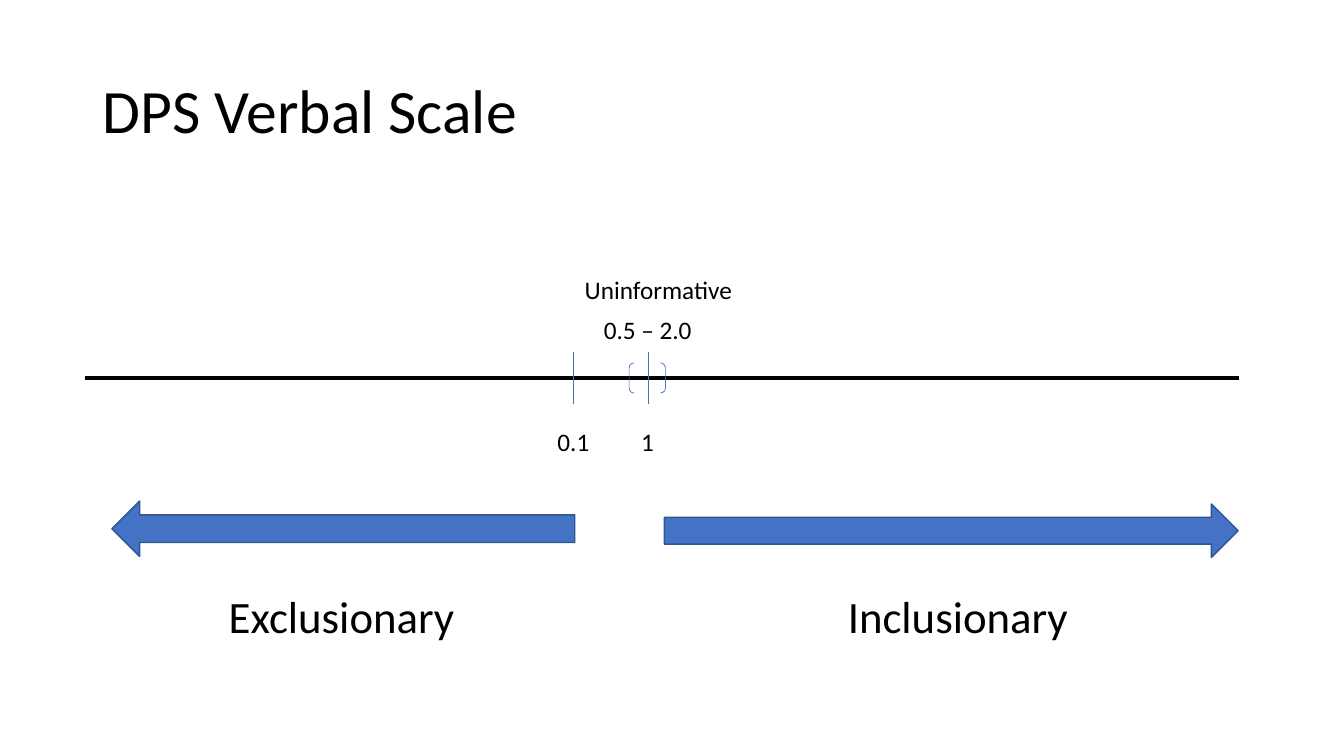
from lxml import etree
from pptx import Presentation
from pptx import util as u
from pptx.dml.color import RGBColor
from pptx.enum import shapes, text
from pptx.oxml.ns import qn

# Content: lengths in inches
TITLE = "DPS Verbal Scale"
AXIS = (0.84, 12.29, 3.75)  # left, right, height on slide
TICKS = [5.69, 6.43]
RANGE = (6.24, 3.6, 0.36, 0.3)
LABELS = [  # words, size name, left, top, width, height
    ("1", "small", 6.26, 4.18, 0.33, 0.4),
    ("0.5 – 2.0", "small", 5.89, 3.07, 1.08, 0.4),
    ("Uninformative", "small", 5.7, 2.67, 1.68, 0.4),
    ("0.1", "small", 5.43, 4.18, 0.52, 0.4),
    ("Exclusionary", "large", 2.17, 5.79, 2.46, 0.64),
    ("Inclusionary", "large", 8.31, 5.79, 2.41, 0.64),
]
ARROWS = [  # box, turn in degrees
    ((1.11, 4.97, 4.59, 0.55), 0),
    ((6.59, 5, 5.69, 0.53), 180),
]


class Theme:
    font = "Calibri"
    ink = RGBColor.from_string("000000")
    blue = RGBColor.from_string("4472C4")
    edge = RGBColor.from_string("325491")
    size = {"title": 44, "large": 32, "small": 18}
    thick, mid, thin = 3, 1, 0.5


def inches(*vals):
    return [u.Inches(v) for v in vals]


def write(frame, words, size):
    para = frame.paragraphs[0]
    run = para.add_run()
    run.text = words
    run.font.name = Theme.font
    run.font.size = u.Pt(Theme.size[size])
    run.font.color.rgb = Theme.ink
    return para


def stroke(item, color, width):
    item.line.color.rgb = color
    item.line.width = u.Pt(width)


def rule(slide, ends, color, width):
    line = slide.shapes.add_connector(shapes.MSO_CONNECTOR.STRAIGHT, *inches(*ends))
    stroke(line, color, width)
    etree.SubElement(line._element.spPr, qn("a:effectLst"))


def form(slide, kind, box, color, width):
    item = slide.shapes.add_shape(kind, *inches(*box))
    item.shadow.inherit = False
    stroke(item, color, width)
    return item


def label(slide, words, size, *box):
    frame = slide.shapes.add_textbox(*inches(*box)).text_frame
    frame.word_wrap = False
    frame.auto_size = text.MSO_AUTO_SIZE.SHAPE_TO_FIT_TEXT
    write(frame, words, size)


def main():
    deck = Presentation()
    deck.slide_width, deck.slide_height = inches(13.33, 7.5)
    slide = deck.slides.add_slide(deck.slide_layouts[5])

    # Title
    head = slide.shapes.title
    head.left, head.top, head.width, head.height = inches(0.92, 0.4, 11.5, 1.45)
    head.text_frame.vertical_anchor = text.MSO_ANCHOR.MIDDLE
    para = write(head.text_frame, TITLE, "title")
    para.alignment = text.PP_ALIGN.LEFT
    para.line_spacing = 0.9

    # Scale with ticks and the uninformative range
    left, right, mid = AXIS
    rule(slide, (left, mid, right, mid), Theme.ink, Theme.thick)
    for x in TICKS:
        rule(slide, (x, mid + 0.26, x, mid - 0.26), Theme.blue, Theme.thin)
    pair = form(slide, shapes.MSO_SHAPE.DOUBLE_BRACKET, RANGE, Theme.blue, Theme.thin)
    pair.fill.background()

    # Labels
    for row in LABELS:
        label(slide, *row)

    # Direction arrows
    for box, turn in ARROWS:
        arrow = form(slide, shapes.MSO_SHAPE.LEFT_ARROW, box, Theme.edge, Theme.mid)
        arrow.fill.solid()
        arrow.fill.fore_color.rgb = Theme.blue
        arrow.rotation = turn

    deck.save("out.pptx")


if __name__ == "__main__":
    main()
